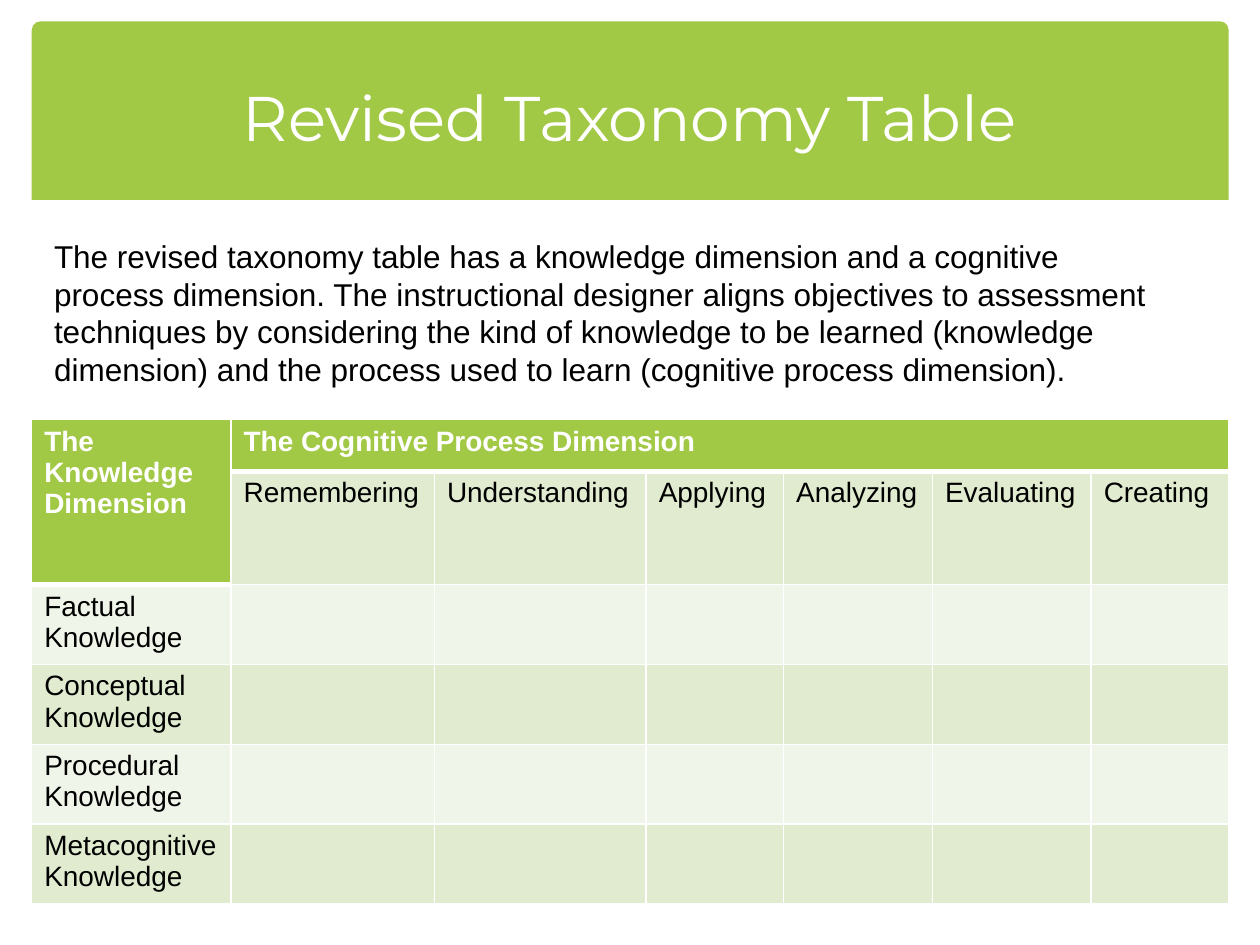
from lxml import etree
from pptx import Presentation
from pptx.dml.color import RGBColor
from pptx.enum.shapes import MSO_CONNECTOR as CONNECTOR, MSO_SHAPE as SHAPE
from pptx.enum.text import MSO_ANCHOR as ANCHOR, PP_ALIGN as ALIGN
from pptx.oxml import parse_xml
from pptx.oxml.ns import nsdecls, qn
from pptx.util import Cm, Pt

GREEN, WHITE, BLACK = "A2C946", "FFFFFF", "000000"
BANDS = ["F0F5E9", "E0EBCF"]


def color(hex_string):
    return RGBColor.from_string(hex_string)


def write(frame, text, size, hex_string, name="Arial", bold=False):
    paragraph = frame.paragraphs[0]
    paragraph.text = text
    font = paragraph.font
    font.name, font.size, font.bold = name, Pt(size), bold
    font.color.rgb = color(hex_string)
    return paragraph


presentation = Presentation()
presentation.slide_width, presentation.slide_height = Cm(25.4), Cm(19.05)
slide = presentation.slides.add_slide(presentation.slide_layouts[6])
shapes = slide.shapes
left, width = Cm(0.64), Cm(24.13)

# Title band
band = shapes.add_shape(SHAPE.ROUND_2_SAME_RECTANGLE, left, Cm(0.43), width, Cm(3.6))
band.adjustments[0], band.adjustments[1] = 0.05, 0
band.shadow.inherit = False
band.fill.solid()
band.fill.fore_color.rgb = color(GREEN)
band.line.fill.background()

# Footer rule
rule = shapes.add_connector(CONNECTOR.STRAIGHT, left, Cm(18.13), left + width, Cm(18.13))
rule.line.color.rgb = color("6B7F3A")
rule.line.width = Pt(1)
etree.SubElement(rule.element.spPr, qn("a:effectLst"))

# Title
title = shapes.add_textbox(Cm(0.84), Cm(0.76), Cm(23.7), Cm(3.18)).text_frame
title.word_wrap = True
title.vertical_anchor = ANCHOR.MIDDLE
write(title, "Revised Taxonomy Table", 36, WHITE, "Montserrat").alignment = ALIGN.CENTER

# Taxonomy table: the first two rows are headings
processes = ["Remembering", "Understanding", "Applying", "Analyzing", "Evaluating", "Creating"]
kinds = ["Factual", "Conceptual", "Procedural", "Metacognitive"]
rows = [
    ["The Knowledge Dimension", "The Cognitive Process Dimension"] + [""] * 5,
    [""] + processes,
] + [[f"{kind} Knowledge"] + [""] * 6 for kind in kinds]
column_widths = [4.02, 4.1, 4.27, 2.77, 3, 3.2, 2.77]

table = shapes.add_table(len(rows), len(column_widths), left, Cm(8.46), width, Cm(6.24)).table
for column, column_width in zip(table.columns, column_widths):
    column.width = Cm(column_width)

for row_index, texts in enumerate(rows):
    table.rows[row_index].height = Cm(1.04)
    for column_index, text in enumerate(texts):
        cell = table.cell(row_index, column_index)
        heading = row_index == 0 or (row_index == 1 and column_index == 0)
        write(cell.text_frame, text, 16, WHITE if heading else BLACK, bold=heading)
        properties = cell._tc.get_or_add_tcPr()
        for side in ("L", "R", "T", "B"):
            points = 3 if heading and side == "B" else 1
            properties.append(parse_xml(
                f'<a:ln{side} {nsdecls("a")} w="{Pt(points)}"><a:solidFill>'
                f'<a:srgbClr val="{WHITE}"/></a:solidFill></a:ln{side}>'))
        cell.fill.solid()
        cell.fill.fore_color.rgb = color(GREEN if heading else BANDS[row_index % 2])

table.cell(0, 0).merge(table.cell(1, 0))
table.cell(0, 1).merge(table.cell(0, 6))

# Introduction
introduction = shapes.add_textbox(Cm(0.84), Cm(4.65), Cm(23.06), Cm(3.33)).text_frame
introduction.word_wrap = True
write(introduction,
      "The revised taxonomy table has a knowledge dimension and a cognitive process "
      "dimension. The instructional designer aligns objectives to assessment techniques "
      "by considering the kind of knowledge to be learned (knowledge dimension) and the "
      "process used to learn (cognitive process dimension).", 18, BLACK)

presentation.save("out.pptx")
